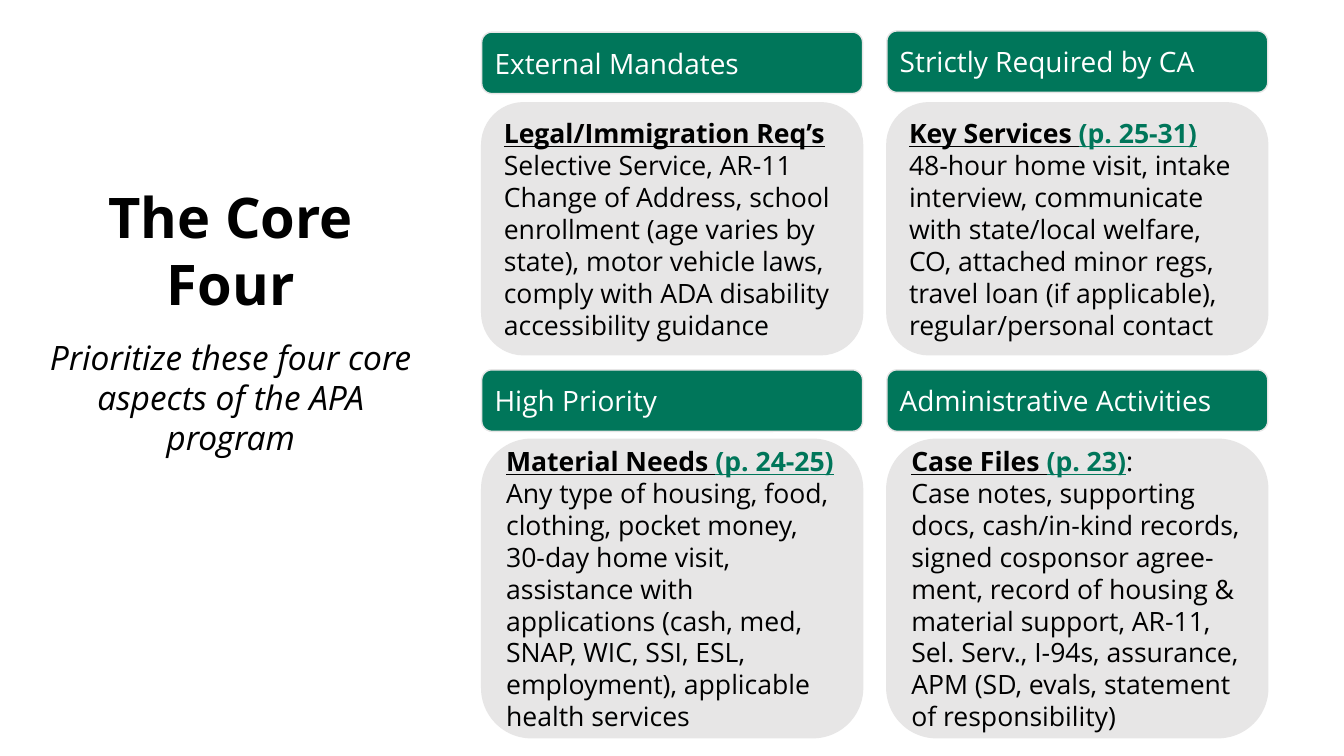
from pptx import Presentation
from pptx.dml.color import RGBColor
from pptx.enum.shapes import MSO_SHAPE as Shape
from pptx.enum.text import MSO_ANCHOR as Anchor, PP_ALIGN as Align
from pptx.util import Cm, Pt

GREEN, GREY, BLACK, WHITE = "00765A", "E7E6E6", "000000", "FFFFFF"


def color(hex_value):
    return RGBColor.from_string(hex_value)


def write(shape, paragraphs, align, anchor):
    """Fill a shape with paragraphs, each a list of (text, hex colour, font formats)."""
    frame = shape.text_frame
    frame.word_wrap = True
    frame.vertical_anchor = anchor
    for index, runs in enumerate(paragraphs):
        paragraph = frame.add_paragraph() if index else frame.paragraphs[0]
        paragraph.alignment = align
        for text, hex_value, formats in runs:
            run = paragraph.add_run()
            run.text = text
            run.font.name = "Open Sans"
            run.font.color.rgb = color(hex_value)
            for name, value in formats.items():
                setattr(run.font, name, value)


presentation = Presentation()
presentation.slide_width, presentation.slide_height = Cm(33.87), Cm(19.05)
slide = presentation.slides.add_slide(presentation.slide_layouts[6])

# Title and subtitle on the left
captions = [
    ("The Core Four", 0.94, 4.47, 9.75, 3.68, {"size": Pt(40), "bold": True}),
    ("Prioritize these four core aspects of the APA program",
     0.86, 8.36, 9.91, 3.33, {"size": Pt(24), "italic": True}),
]
for text, left, top, width, height, formats in captions:
    box = slide.shapes.add_textbox(Cm(left), Cm(top), Cm(width), Cm(height))
    write(box, [[(text, BLACK, formats)]], Align.CENTER, Anchor.TOP)

# Four cards, each a green header above a grey body
card_lefts = [12.14, 22.35]
card_width, header_height = 9.6, 1.55
body_rows = [(2.59, 6.35), (11.07, 7.52)]
header_format = {"size": Pt(20)}
body_format = {"size": Pt(19)}
heading_format = {"size": Pt(19), "bold": True, "underline": True}

# column, row, header top, header, heading, pages, text after pages, details
cards = [
    (0, 0, 0.81, "External Mandates", "Legal/Immigration Req’s", "", "",
     "Selective Service, AR-11 Change of Address, school enrollment (age varies by "
     "state), motor vehicle laws, comply with ADA disability accessibility guidance"),
    (1, 0, 0.78, "Strictly Required by CA", "Key Services ", "(p. 25-31)", "",
     "48-hour home visit, intake interview, communicate with state/local welfare, "
     "CO, attached minor regs, travel loan (if applicable), regular/personal contact"),
    (0, 1, 9.32, "High Priority", "Material Needs ", "(p. 24-25)", "",
     "Any type of housing, food, clothing, pocket money, 30-day home visit, "
     "assistance with applications (cash, med, SNAP, WIC, SSI, ESL, employment), "
     "applicable health services"),
    (1, 1, 9.32, "Administrative Activities", "Case Files ", "(p. 23)", ":",
     "Case notes, supporting docs, cash/in-kind records, signed cosponsor agree-ment, "
     "record of housing & material support, AR-11, Sel. Serv., I-94s, assurance, "
     "APM (SD, evals, statement of responsibility)"),
]
for column, row, header_top, header, heading, pages, suffix, details in cards:
    heading_runs = [
        (heading, BLACK, heading_format),
        (pages, GREEN, heading_format),
        (suffix, BLACK, body_format),
    ]
    body_paragraphs = [
        [run for run in heading_runs if run[0]],
        [(details, BLACK, body_format)],
    ]
    body_top, body_height = body_rows[row]
    panels = [
        (body_top, body_height, GREY, body_paragraphs),
        (header_top, header_height, GREEN, [[(header, WHITE, header_format)]]),
    ]
    for top, height, fill, paragraphs in panels:
        panel = slide.shapes.add_shape(
            Shape.ROUNDED_RECTANGLE,
            Cm(card_lefts[column]), Cm(top), Cm(card_width), Cm(height))
        panel.shadow.inherit = False
        panel.fill.solid()
        panel.fill.fore_color.rgb = color(fill)
        panel.line.color.rgb = color(GREY)
        panel.line.width = Pt(1)
        write(panel, paragraphs, Align.LEFT, Anchor.MIDDLE)

presentation.save("out.pptx")
